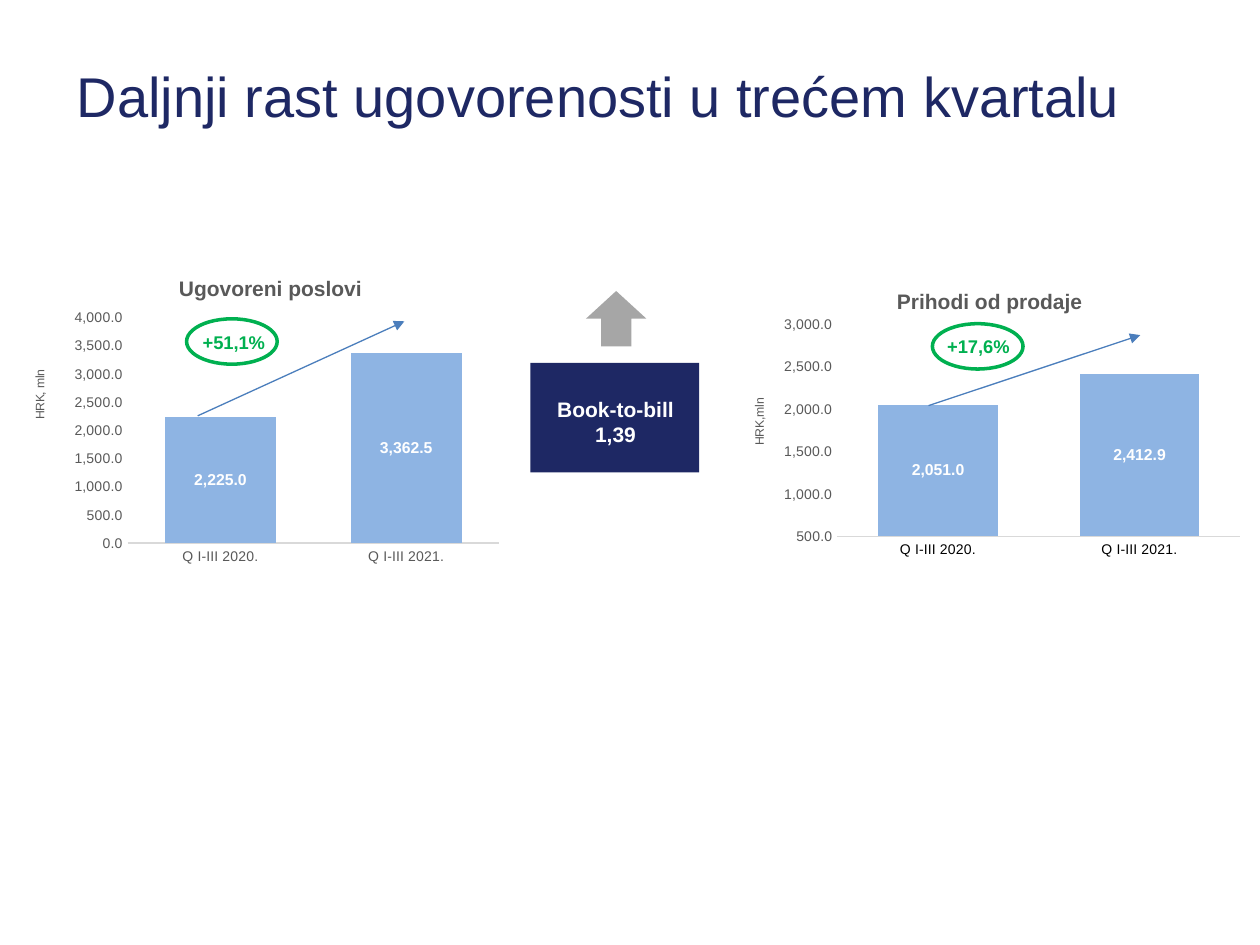
import dataclasses

import pptx
import pptx.chart.data
import pptx.dml.color
import pptx.enum.chart
import pptx.enum.shapes
import pptx.enum.text
import pptx.oxml
import pptx.oxml.ns
import pptx.util

Pt = pptx.util.Pt
qn = pptx.oxml.ns.qn
SHAPE = pptx.enum.shapes.MSO_SHAPE
ALIGN = pptx.enum.text.PP_ALIGN

FONT = "Arial"
NAVY, GREEN, GREY, WHITE = "1E2864", "00B050", "595959", "FFFFFF"
BAR, ARROW, AXIS, UP = "8EB4E3", "4B7EBC", "D9D9D9", "A6A6A6"
NUMBER_FORMAT = "#,##0.0"
QUARTERS = ("Q I-III 2020.", "Q I-III 2021.")
Box = tuple[float, float, float, float]


@dataclasses.dataclass(frozen=True)
class Growth:
    """A column chart with its trend arrow and ringed growth rate."""
    title: str
    unit: str
    values: tuple[float, float]
    low: float
    high: float
    category_color: str
    box: Box
    plot: Box
    title_at: tuple[float, float]
    unit_at: tuple[float, float]
    trend: Box
    rate: str
    ring: tuple[float, float]
    rate_at: tuple[float, float]


CHARTS = (
    Growth("Ugovoreni poslovi", "HRK, mln", (2225, 3362.5), 0, 4000, GREY,
           (11.5, 146.2, 285.8, 187.2), (0.215, 0.188, 0.743, 0.689),
           (0.31, 0.05), (0.02, 0.34), (113, 237.6, 231.1, 183.6),
           "+51,1%", (106.6, 182.2), (108.7, 185.8)),
    Growth("Prihodi od prodaje", "HRK,mln", (2051, 2412.9), 500, 3000, "000000",
           (416.2, 155.5, 303.8, 177.1), (0.205, 0.168, 0.758, 0.685),
           (0.31, 0.04), (0.04, 0.4), (530.6, 231.8, 651.6, 191.5),
           "+17,6%", (532.8, 185), (534.2, 187.9)),
)


def rgb(color: str) -> pptx.dml.color.RGBColor:
    return pptx.dml.color.RGBColor.from_string(color)


def style(font, size: float, color: str, bold: bool = False) -> None:
    font.name, font.size, font.bold = FONT, Pt(size), bold
    font.color.rgb = rgb(color)


def add_run(paragraph, text: str, size: float, color: str, bold: bool = False) -> None:
    run = paragraph.add_run()
    run.text = text
    style(run.font, size, color, bold)


def set_layout(parent, *fractions: float, inner: bool = False) -> None:
    """Place a chart part by fractions of the chart area."""
    layout = parent.find(qn("c:layout"))
    if layout is None:
        layout = parent.makeelement(qn("c:layout"), {})
        parent.insert(0, layout)
    manual = layout.makeelement(qn("c:manualLayout"), {})
    layout.append(manual)
    settings = [("layoutTarget", "inner")] if inner else []
    settings += [("xMode", "edge"), ("yMode", "edge")]
    settings += zip("xywh", fractions)
    for tag, value in settings:
        manual.append(manual.makeelement(qn(f"c:{tag}"), {"val": str(value)}))


def add_shape(slide, kind, box: Box, fill: str | None = None, line: str | None = None) -> None:
    shape = slide.shapes.add_shape(kind, *map(Pt, box))
    shape.shadow.inherit = False
    if fill:
        shape.fill.solid()
        shape.fill.fore_color.rgb = rgb(fill)
    else:
        shape.fill.background()
    if line:
        shape.line.color.rgb = rgb(line)
        shape.line.width = Pt(2)
    else:
        shape.line.fill.background()


def add_text(slide, box: Box, lines: tuple[str, ...], size: float, color: str, align) -> None:
    frame = slide.shapes.add_textbox(*map(Pt, box)).text_frame
    frame.word_wrap = len(lines) > 1
    for index, line in enumerate(lines):
        paragraph = frame.add_paragraph() if index else frame.paragraphs[0]
        paragraph.alignment = align
        add_run(paragraph, line, size, color, bold=True)


def add_trend(slide, ends: Box) -> None:
    trend = slide.shapes.add_connector(
        pptx.enum.shapes.MSO_CONNECTOR.STRAIGHT, *map(Pt, ends))
    trend.line.color.rgb = rgb(ARROW)
    trend.line.width = Pt(0.75)
    line = trend.line._get_or_add_ln()
    line.append(line.makeelement(qn("a:tailEnd"), {"type": "triangle"}))
    properties = line.getparent()
    properties.append(properties.makeelement(qn("a:effectLst"), {}))


def add_chart(slide, growth: Growth) -> None:
    data = pptx.chart.data.CategoryChartData(number_format=NUMBER_FORMAT)
    data.categories = QUARTERS
    data.add_series("Series 1", growth.values)
    chart = slide.shapes.add_chart(
        pptx.enum.chart.XL_CHART_TYPE.COLUMN_CLUSTERED, *map(Pt, growth.box), data).chart
    style(chart.font, 10, "000000")
    chart.has_legend = False

    # Chart title
    add_run(chart.chart_title.text_frame.paragraphs[0], growth.title, 12, GREY, bold=True)
    set_layout(chart.chart_title._element, *growth.title_at)
    set_layout(chart._chartSpace.find(".//" + qn("c:plotArea")), *growth.plot, inner=True)

    # Axes
    categories, values = chart.category_axis, chart.value_axis
    for axis, color in ((categories, growth.category_color), (values, GREY)):
        axis.has_major_gridlines = False
        axis.major_tick_mark = axis.minor_tick_mark = pptx.enum.chart.XL_TICK_MARK.NONE
        style(axis.tick_labels.font, 8, color)
    categories.format.line.color.rgb = rgb(AXIS)
    categories.format.line.width = Pt(0.75)
    values.format.line.fill.background()
    values.minimum_scale, values.maximum_scale = growth.low, growth.high
    values.major_unit = 500
    values.tick_labels.number_format = NUMBER_FORMAT
    values.tick_labels.number_format_is_linked = False
    unit = values.axis_title
    add_run(unit.text_frame.paragraphs[0], growth.unit, 7, GREY)
    turned = unit._element.find(".//" + qn("a:bodyPr"))
    turned.set("rot", "-5400000")
    turned.set("vert", "horz")
    set_layout(unit._element, *growth.unit_at)

    # Columns and their values
    plot = chart.plots[0]
    plot.gap_width, plot.overlap, plot.vary_by_categories = 68, -52, False
    columns = plot.series[0].format.fill
    columns.solid()
    columns.fore_color.rgb = rgb(BAR)
    labels = plot.series[0].data_labels
    labels.show_value = True
    labels.position = pptx.enum.chart.XL_LABEL_POSITION.CENTER
    labels.number_format = NUMBER_FORMAT
    labels.number_format_is_linked = False
    style(labels.font, 9, WHITE, bold=True)


def main() -> None:
    deck = pptx.Presentation()
    deck.slide_width, deck.slide_height = Pt(720), Pt(540)
    slide = deck.slides.add_slide(deck.slide_layouts[5])

    # Headline
    headline = slide.shapes.title
    headline.left, headline.top, headline.width, headline.height = map(
        Pt, (36.7, 31.7, 674.6, 45.4))
    headline.text_frame.auto_size = pptx.enum.text.MSO_AUTO_SIZE.NONE
    headline.text_frame.vertical_anchor = pptx.enum.text.MSO_ANCHOR.MIDDLE
    paragraph = headline.text_frame.paragraphs[0]
    paragraph.alignment = ALIGN.LEFT
    add_run(paragraph, "Daljnji rast ugovorenosti u trećem kvartalu", 32, NAVY)

    # Charts with growth rates
    for growth in CHARTS:
        add_chart(slide, growth)
        add_trend(slide, growth.trend)
        add_shape(slide, SHAPE.OVAL, (*growth.ring, 51.8, 25.9), line=GREEN)
        add_text(slide, (*growth.rate_at, 51.1, 20.2), (growth.rate,), 10.5, GREEN, ALIGN.LEFT)

    # Book-to-bill ratio
    add_shape(slide, SHAPE.RECTANGLE, (303.1, 207.4, 96.5, 62.6), fill=NAVY)
    add_text(slide, (310.7, 223.2, 82.1, 36), ("Book-to-bill", "1,39"), 12, WHITE, ALIGN.CENTER)
    add_shape(slide, SHAPE.UP_ARROW, (334.8, 166.3, 34.6, 31.7), fill=UP)

    deck.save("out.pptx")


if __name__ == "__main__":
    main()
